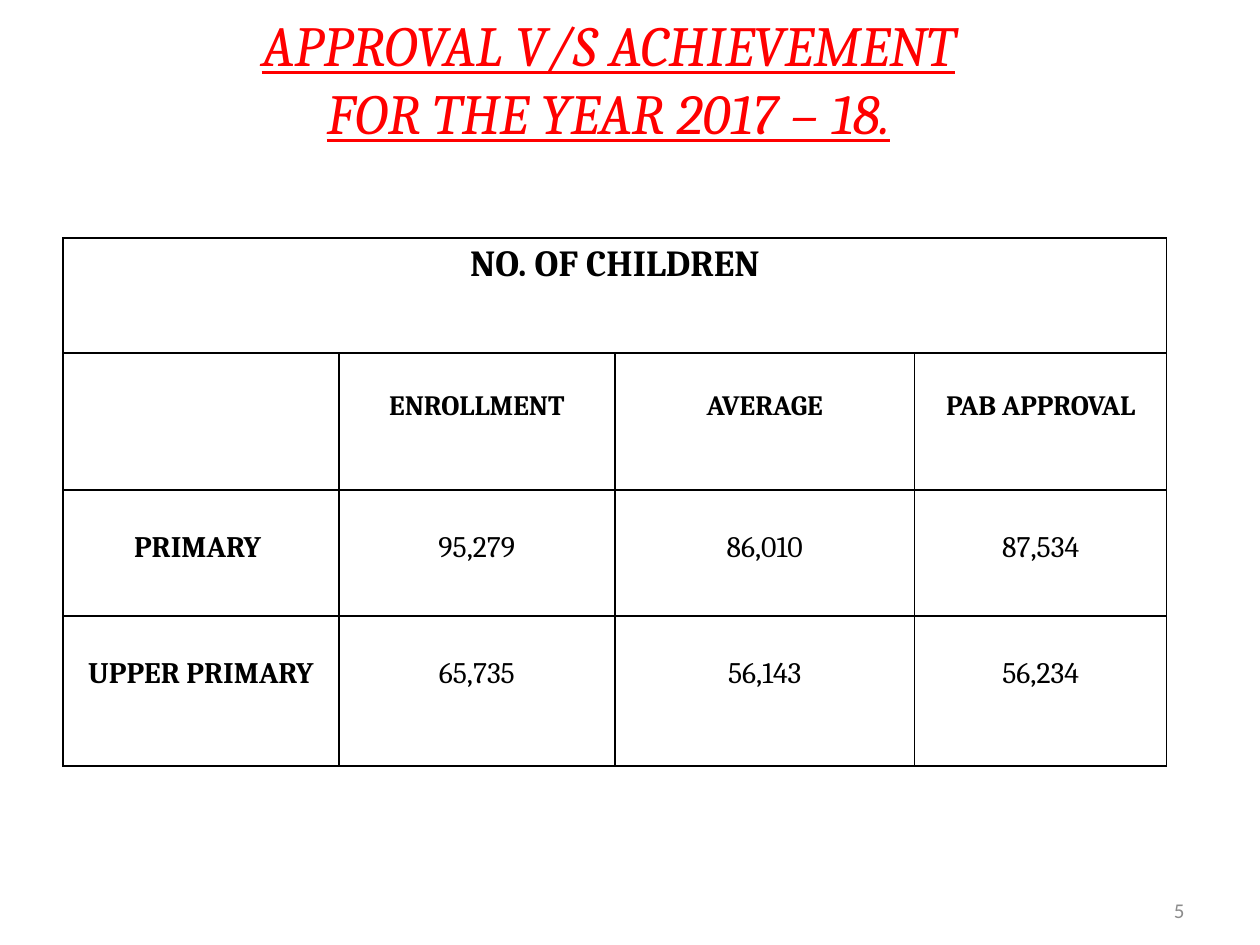
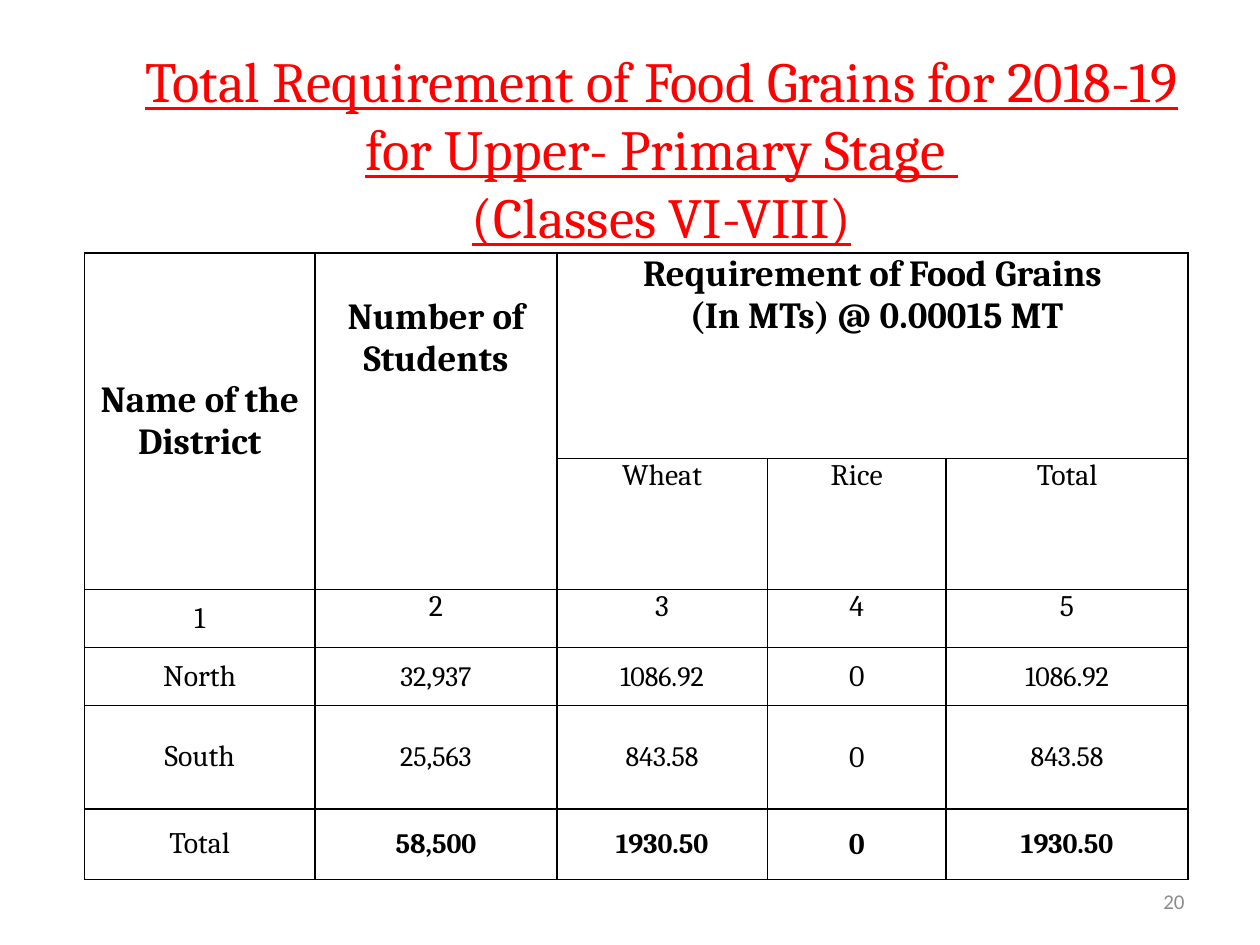
from lxml.etree import SubElement
from pptx import Presentation
from pptx.dml.color import RGBColor
from pptx.enum.text import MSO_ANCHOR, PP_ALIGN
from pptx.oxml.ns import qn
from pptx.util import Inches, Pt

COLORS = {"title": "FF0000", "text": "000000", "border": "000000", "number": "8C8C8C"}
FONTS = {"main": "Cambria", "number": "Calibri"}
TOP, MIDDLE = MSO_ANCHOR.TOP, MSO_ANCHOR.MIDDLE

# Cell formats: size, bold, anchor and margins (left/right, top, bottom)
WIDE, TIGHT, THIN = (0.1, 0.04, 0.04), (0.07, 0, 0), (0.01, 0.01, 0)
CELLS = {
    "band": (21, True, TOP, WIDE),
    "column": (16, True, TOP, (0.1, 0.3, 0.04)),
    "stage": (17, True, TOP, (0.1, 0.32, 0.04)),
    "count": (17, False, TOP, (0.1, 0.32, 0.04)),
    "head": (21, True, TOP, TIGHT),
    "head_low": (21, True, TOP, (0.07, 0.34, 0)),
    "head_mid": (21, True, MIDDLE, TIGHT),
    "label": (17, False, TOP, TIGHT),
    "label_mid": (17, False, MIDDLE, TIGHT),
    "value": (16, False, MIDDLE, THIN),
    "zero": (17, False, MIDDLE, THIN),
    "sum": (16, True, MIDDLE, THIN),
    "sum_zero": (17, True, MIDDLE, THIN),
}


class Deck:
    def __init__(self):
        self.prs = Presentation()
        self.prs.slide_width, self.prs.slide_height = Inches(10), Inches(7.5)
        self.s = None

    def slide(self):
        self.s = self.prs.slides.add_slide(self.prs.slide_layouts[6])

    def fill_text(self, tf, text, color, align=PP_ALIGN.CENTER, **font):
        for i, line in enumerate(text.split("\n")):
            p = tf.paragraphs[0] if i == 0 else tf.add_paragraph()
            p.alignment = align
            r = p.add_run()
            r.text = line
            for name, value in font.items():
                setattr(r.font, name, value)
            r.font.color.rgb = RGBColor.from_string(COLORS[color])

    def text(self, box, text, color, **font):
        tf = self.s.shapes.add_textbox(*map(Inches, box)).text_frame
        tf.word_wrap = True
        tf.vertical_anchor = MIDDLE
        self.fill_text(tf, text, color, **font)

    def title(self, box, text, italic=False):
        self.text(box, text, "title", name=FONTS["main"], size=Pt(32.4),
                  underline=True, italic=italic)

    def number(self, top, text):
        self.text((7.17, top, 2.33, 0.4), text, "number", align=PP_ALIGN.RIGHT,
                  name=FONTS["number"], size=Pt(12))

    def border(self, cell):
        tcPr = cell._tc.get_or_add_tcPr()
        for i, side in enumerate(("lnL", "lnR", "lnT", "lnB")):
            ln = SubElement(tcPr, qn(f"a:{side}"), w=str(Pt(1)))
            fill = SubElement(ln, qn("a:solidFill"))
            SubElement(fill, qn("a:srgbClr"), val=COLORS["border"])
            tcPr.insert(i, ln)

    def cell(self, cell, text, kind):
        size, bold, anchor, (side, top, bottom) = CELLS[kind]
        margins = {"margin_left": side, "margin_right": side,
                   "margin_top": top, "margin_bottom": bottom}
        for name, value in margins.items():
            setattr(cell, name, Inches(value))
        cell.vertical_anchor = anchor
        self.fill_text(cell.text_frame, text, "text", name=FONTS["main"],
                       size=Pt(size), bold=bold)

    def table(self, left, top, widths, heights, rows, spans):
        """Rows hold (text, kind) pairs, or None for an empty or merged cell."""
        size = map(Inches, (left, top, sum(widths), sum(heights)))
        table = self.s.shapes.add_table(len(heights), len(widths), *size).table
        table.first_row = table.horz_banding = False
        for col, width in zip(table.columns, widths):
            col.width = Inches(width)
        for row, height in zip(table.rows, heights):
            row.height = Inches(height)
        for row, items in zip(table.rows, rows):
            for cell, item in zip(row.cells, items):
                cell.fill.background()
                self.border(cell)
                if item:
                    self.cell(cell, *item)
        for first, last in spans:
            table.cell(*first).merge(table.cell(*last))


def row(first, first_kind, values, kind):
    return [(first, first_kind)] + [(v, kind) for v in values]


def grain_row(name, students, wheat, rice, kind, rice_kind):
    return [(name, "label_mid"), (students, kind), (wheat, kind),
            (rice, rice_kind), (wheat, kind)]


def approval_slide(deck):
    deck.slide()
    rows = [
        [("NO. OF CHILDREN", "band"), None, None, None],
        [None] + [(t, "column") for t in ("ENROLLMENT", "AVERAGE", "PAB APPROVAL")],
        row("PRIMARY ", "stage", ("95,279", "86,010", "87,534"), "count"),
        row("UPPER PRIMARY", "stage", ("65,735", "56,143", "56,234"), "count"),
    ]
    deck.table(0.5, 1.89, (2.19, 2.19, 2.38, 2), (0.91, 1.09, 1, 1.19), rows,
               [((0, 0), (0, 3))])
    deck.number(7.02, "5")
    deck.title((0.33, 0.01, 9, 1.22),
               "APPROVAL V/S ACHIEVEMENT\nFOR THE YEAR 2017 – 18.", italic=True)


def food_grains_slide(deck):
    deck.slide()
    deck.number(6.95, "20")
    deck.title((0.75, 0.41, 9, 1.53),
               "Total Requirement of Food Grains for 2018-19 "
               "for Upper- Primary Stage \n(Classes VI-VIII)")
    rows = [
        [("Name of the District", "head_mid"), ("Number of Students", "head_low"),
         ("Requirement of Food Grains\n (In MTs) @ 0.00015 MT", "head"), None, None],
        [None, None] + [(t, "label") for t in ("Wheat", "Rice", "Total")],
        row("1", "label_mid", "2345", "label"),
        grain_row("North", "32,937", "1086.92", "0", "value", "zero"),
        grain_row("South", "25,563", "843.58", "0", "value", "zero"),
        grain_row("Total", "58,500", "1930.50", "0", "sum", "sum_zero"),
    ]
    deck.table(0.67, 2.01, (1.83, 1.92, 1.67, 1.42, 1.92),
               (1.63, 1.01, 0.46, 0.46, 0.82, 0.56), rows,
               [((0, 0), (1, 0)), ((0, 1), (1, 1)), ((0, 2), (0, 4))])


def main():
    deck = Deck()
    approval_slide(deck)
    food_grains_slide(deck)
    deck.prs.save("out.pptx")


if __name__ == "__main__":
    main()
